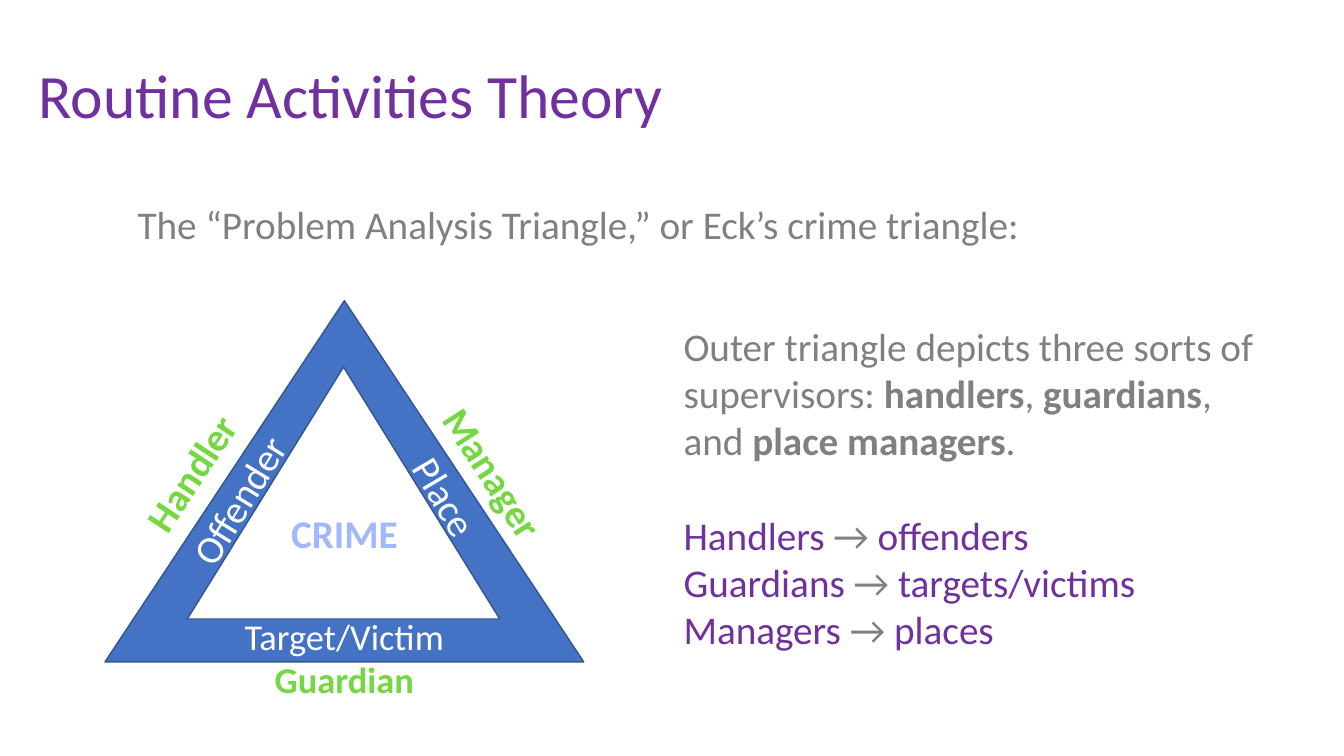
"""Build the Routine Activities Theory slide with its crime triangle."""
from dataclasses import dataclass

from pptx import Presentation
from pptx.dml.color import RGBColor
from pptx.enum.shapes import MSO_SHAPE as Shape
from pptx.enum.text import MSO_ANCHOR as Anchor, PP_ALIGN as Align
from pptx.util import Inches, Pt


@dataclass(frozen=True)
class Theme:
    font: str = "Calibri"
    purple: str = "7030A0"
    gray: str = "808080"
    blue: str = "4472C4"
    edge: str = "325491"
    white: str = "FFFFFF"
    green: str = "75D840"
    pale: str = "A1B8FF"
    title: int = 44
    body: int = 28
    small: int = 26
    line_height: float = 1.22


THEME = Theme()
COLUMNS, ROWS = 16, 9

TITLE = "Routine Activities Theory"
INTRO = "The “Problem Analysis Triangle,” or Eck’s crime triangle:"
SUPERVISORS = [
    ("Outer triangle depicts three sorts of supervisors: ", False),
    ("handlers", True),
    (", ", False),
    ("guardians", True),
    (", and ", False),
    ("place managers", True),
    (".", False),
]
PAIRS = [("Handlers", "offenders"), ("Guardians", "targets/victims"), ("Managers", "places")]

TITLE_AREA = (0.34, 0.3, 13.8, 1.74)
INTRO_AREA = (1.52, 2.39, 13.8, 0.7)
NOTES_AREA = (8.02, 3.78, 7.34, 4.08)
TRIANGLES = [
    ((1.25, 3.58, 5.7, 4.3), THEME.blue),
    ((2.23, 4.37, 3.72, 3), THEME.white),
]
LABELS = [
    ("Offender", 2.84, 5.95, 2.29, 301.5, THEME.body, THEME.white, False),
    ("Place", 5.3, 5.91, 1.3, 59.2, THEME.body, THEME.white, False),
    ("Target/Victim", 4.1, 7.58, 2.7, 0, THEME.small, THEME.white, False),
    ("CRIME", 4.1, 6.35, 1.57, 0, THEME.body, THEME.pale, True),
    ("Handler", 2.27, 5.63, 1.85, 303.5, THEME.body, THEME.green, True),
    ("Manager", 5.87, 5.63, 2.05, 57.1, THEME.body, THEME.green, True),
    ("Guardian", 4.1, 8.09, 1.93, 0, THEME.small, THEME.green, True),
]

deck = Presentation()
deck.slide_width, deck.slide_height = Inches(13.33), Inches(7.5)
page = deck.slides.add_slide(deck.slide_layouts[6])


def place(area):
    """Turn grid units into slide lengths."""
    steps = (deck.slide_width / COLUMNS, deck.slide_height / ROWS) * 2
    return [round(units * step) for units, step in zip(area, steps)]


def add_box(area, wrap=True):
    """Add an empty text box."""
    box = page.shapes.add_textbox(*place(area))
    box.text_frame.word_wrap = wrap
    return box


def add_span(para, text, size, color, bold=False):
    """Add one styled run."""
    span = para.add_run()
    span.text = text
    span.font.name, span.font.size, span.font.bold = THEME.font, Pt(size), bold
    span.font.color.rgb = RGBColor.from_string(color)


def add_heading(area, text, size, color, anchor):
    """Add a single tightly spaced line."""
    frame = add_box(area).text_frame
    frame.vertical_anchor = anchor
    frame.paragraphs[0].line_spacing = 0.9
    add_span(frame.paragraphs[0], text, size, color)


def add_triangle(area, fill):
    """Add one outlined triangle."""
    triangle = page.shapes.add_shape(Shape.ISOSCELES_TRIANGLE, *place(area))
    triangle.shadow.inherit = False
    triangle.fill.solid()
    triangle.fill.fore_color.rgb = RGBColor.from_string(fill)
    triangle.line.color.rgb = RGBColor.from_string(THEME.edge)
    triangle.line.width = Pt(1)


def add_label(text, center, middle, width, angle, size, color, bold):
    """Add a label turned about its centre."""
    height = (Pt(size) * THEME.line_height + Inches(0.1)) * ROWS / deck.slide_height
    box = add_box((center - width / 2, middle - height / 2, width, height), wrap=False)
    box.rotation = angle
    para = box.text_frame.paragraphs[0]
    para.alignment = Align.CENTER
    add_span(para, text, size, color, bold)


def add_notes():
    """Add the explanation and the supervisor pairs."""
    frame = add_box(NOTES_AREA).text_frame
    for text, bold in SUPERVISORS:
        add_span(frame.paragraphs[0], text, THEME.body, THEME.gray, bold)
    for index, (supervisor, subject) in enumerate(PAIRS):
        para = frame.add_paragraph()
        if index == 0:
            para.space_before = Pt(round(THEME.body * THEME.line_height))
        for text, color in ((supervisor, THEME.purple), (" → ", THEME.gray), (subject, THEME.purple)):
            add_span(para, text, THEME.body, color)


add_heading(TITLE_AREA, TITLE, THEME.title, THEME.purple, Anchor.MIDDLE)
add_heading(INTRO_AREA, INTRO, THEME.body, THEME.gray, Anchor.TOP)
for triangle_parts in TRIANGLES:
    add_triangle(*triangle_parts)
for label_parts in LABELS:
    add_label(*label_parts)
add_notes()
deck.save("out.pptx")
